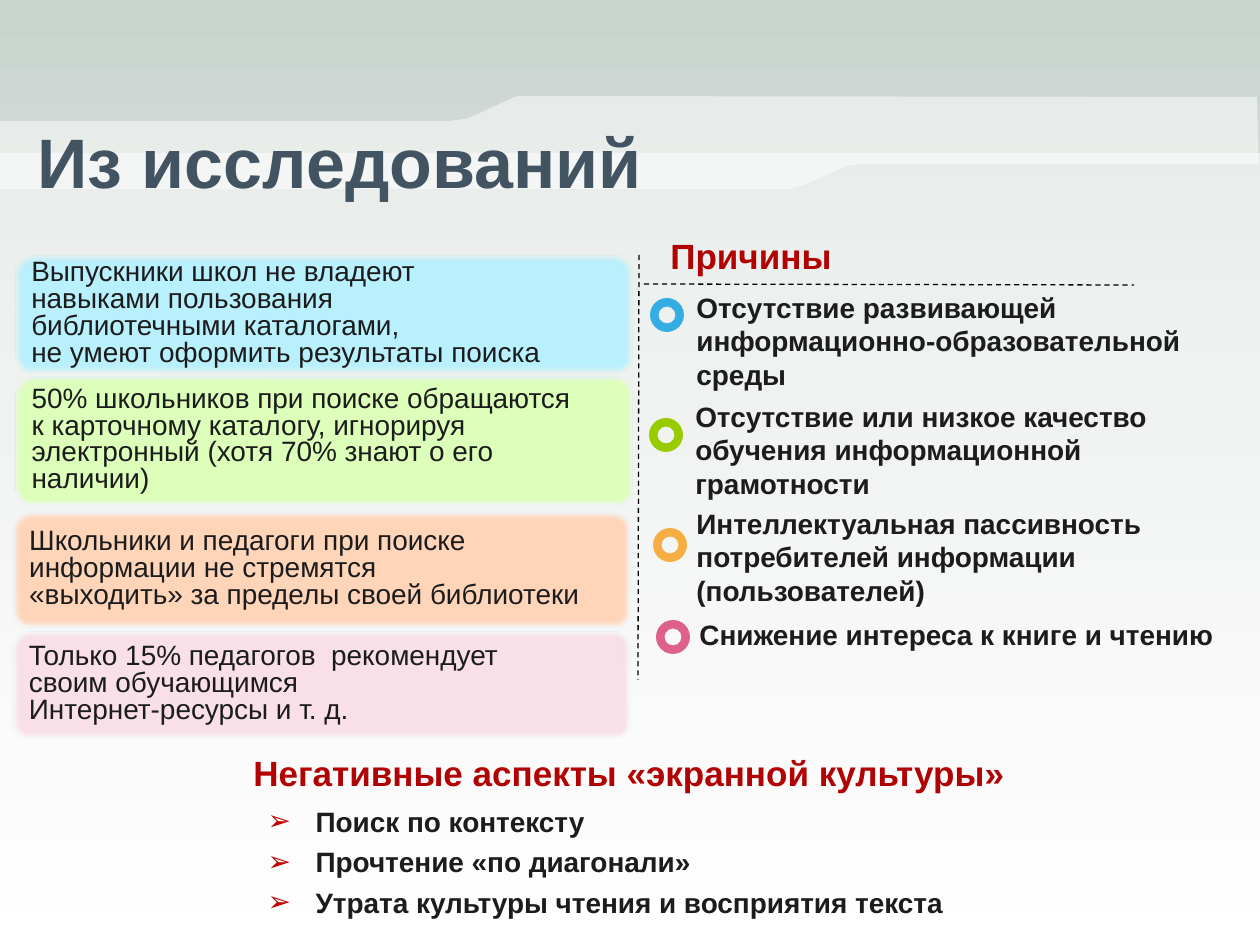
from typing import NamedTuple

from lxml.etree import SubElement as Sub
from pptx import Presentation
from pptx.dml.color import RGBColor as Rgb
from pptx.enum.dml import MSO_LINE as Dash
from pptx.enum.shapes import MSO_CONNECTOR as Link, MSO_SHAPE as Form
from pptx.enum.text import MSO_ANCHOR as Anchor, MSO_AUTO_SIZE as Auto, PP_ALIGN as Align
from pptx.oxml.ns import qn
from pptx.util import Pt

PX = 914400 / 126
FACE = "Arial"
INK = Rgb(0x1C, 0x1C, 0x1C)
SLATE = Rgb(0x42, 0x54, 0x62)
RED = Rgb(0xB1, 0x03, 0x03)
BLACK = Rgb(0x00, 0x00, 0x00)
WHITE = Rgb(0xFF, 0xFF, 0xFF)
MIST = Rgb(0xCA, 0xD4, 0xCF)
BLUE = Rgb(0x35, 0xAD, 0xE3)
GREEN = Rgb(0x99, 0xCC, 0x00)
AMBER = Rgb(0xF6, 0xAE, 0x44)
PINK = Rgb(0xDE, 0x60, 0x8D)
SKY = Rgb(0xB9, 0xF0, 0xFD)
LIME = Rgb(0xDC, 0xFF, 0xB9)
PEACH = Rgb(0xFF, 0xD5, 0xB9)
ROSE = Rgb(0xF8, 0xDF, 0xE8)


class Box(NamedTuple):
    x: int
    y: int
    w: int
    h: int


class Card(NamedTuple):
    box: Box
    fill: Rgb
    text: str


class Cause(NamedTuple):
    ring: tuple[int, int]
    color: Rgb
    box: Box
    text: str


BANDS = [
    [(0, 153), (1260, 153), (1260, 945), (0, 945)],
    [(0, 121), (449, 121), (465, 119), (476, 115), (514, 97), (519, 96), (1257, 97),
     (1259, 164), (872, 164), (849, 165), (804, 185), (789, 189), (0, 189)],
]
RULES = [((639, 255), (638, 680)), ((644, 284), (1134, 285))]
CARDS = [
    Card(Box(15, 255, 617, 118), SKY,
         "Выпускники школ не владеют\nнавыками пользования\n"
         "библиотечными каталогами,\nне умеют оформить результаты поиска"),
    Card(Box(15, 377, 617, 127), LIME,
         "50% школьников при поиске обращаются\nк карточному каталогу, игнорируя\n"
         "электронный (хотя 70% знают о его\nналичии)"),
    Card(Box(13, 512, 617, 115), PEACH,
         "Школьники и педагоги при поиске\nинформации не стремятся\n"
         "«выходить» за пределы своей библиотеки"),
    Card(Box(13, 631, 617, 107), ROSE,
         "Только 15% педагогов  рекомендует\nсвоим обучающимся\n"
         "Интернет-ресурсы и т. д."),
]
CAUSES = [
    Cause((650, 298), BLUE, Box(684, 284, 561, 115),
          "Отсутствие развивающей информационно-образовательной среды"),
    Cause((649, 418), GREEN, Box(683, 393, 556, 115),
          "Отсутствие или низкое качество обучения информационной грамотности"),
    Cause((653, 528), AMBER, Box(684, 500, 562, 115),
          "Интеллектуальная пассивность потребителей информации (пользователей)"),
    Cause((656, 620), PINK, Box(687, 611, 558, 47),
          "Снижение интереса к книге и чтению"),
]
RISKS = "Поиск по контексту\nПрочтение «по диагонали»\nУтрата культуры чтения и восприятия текста"


def px(n: int) -> int:
    return round(n * PX)


def place(shape, box: Box) -> None:
    shape.left, shape.top, shape.width, shape.height = map(px, box)


def mark(para) -> None:
    props = para._p.get_or_add_pPr()
    props.set("marL", str(px(48)))
    props.set("indent", str(px(-48)))
    Sub(Sub(props, qn("a:buClr")), qn("a:srgbClr"), val="C00000")
    Sub(props, qn("a:buFont"), typeface=FACE)
    Sub(props, qn("a:buChar"), char="➢")


def write(shape, text: str, size: int = 16, color: Rgb = INK, bold: bool = True,
          anchor=Anchor.TOP, wrap: bool = True, lead: float = 1.0,
          gap: int = 0, bullet: bool = False) -> None:
    frame = shape.text_frame
    frame.auto_size = Auto.NONE
    frame.word_wrap = wrap
    frame.vertical_anchor = anchor
    for i, line in enumerate(text.split("\n")):
        para = frame.add_paragraph() if i else frame.paragraphs[0]
        para.alignment = Align.LEFT
        para.line_spacing = lead
        para.space_before = Pt(gap if i else 0)
        if bullet:
            mark(para)
        run = para.add_run()
        run.text = line
        font = run.font
        font.name, font.size, font.bold = FACE, Pt(size), bold
        font.color.rgb = color


def label(slide, box: Box, text: str, **style) -> None:
    write(slide.shapes.add_textbox(*map(px, box)), text, **style)


def paint(shape, color: Rgb) -> None:
    shape.shadow.inherit = False
    shape.fill.solid()
    shape.fill.fore_color.rgb = color
    shape.line.fill.background()


def band(slide, dots: list[tuple[int, int]]) -> None:
    pen = slide.shapes.build_freeform(*dots[0], scale=PX)
    pen.add_line_segments(dots[1:], close=True)
    shape = pen.convert_to_shape()
    paint(shape, WHITE)
    tone = shape._element.spPr.find(qn("a:solidFill")).find(qn("a:srgbClr"))
    Sub(tone, qn("a:alpha"), val="50000")


def rule(slide, start: tuple[int, int], end: tuple[int, int]) -> None:
    line = slide.shapes.add_connector(Link.STRAIGHT, *map(px, start + end))
    line.line.color.rgb = BLACK
    line.line.width = Pt(0.75)
    line.line.dash_style = Dash.DASH
    Sub(line._element.spPr, qn("a:effectLst"))


def draw_card(slide, card: Card) -> None:
    shape = slide.shapes.add_shape(Form.ROUNDED_RECTANGLE, *map(px, card.box))
    shape.adjustments[0] = 0.115
    paint(shape, card.fill)
    shape.line.color.rgb = BLUE
    shape.line.width = Pt(0.5)
    soft = shape._element.spPr.find(qn("a:effectLst"))
    Sub(soft, qn("a:softEdge"), rad="31750")
    write(shape, card.text, bold=False, anchor=Anchor.MIDDLE, wrap=False, lead=0.8)


def draw_cause(slide, cause: Cause) -> None:
    ring = slide.shapes.add_shape(Form.DONUT, *map(px, cause.ring + (34, 34)))
    ring.adjustments[0] = 0.25
    paint(ring, cause.color)
    label(slide, cause.box, cause.text)


def main() -> None:
    deck = Presentation()
    deck.slide_width, deck.slide_height = px(1260), px(945)
    slide = deck.slides.add_slide(deck.slide_layouts[1])
    back = slide.background.fill
    back.gradient()
    back.gradient_angle = 270
    for stop, color, pos in zip(back.gradient_stops, (MIST, WHITE), (0, 1)):
        stop.color.rgb = color
        stop.position = pos

    for dots in BANDS:
        band(slide, dots)
    title, body = slide.placeholders
    for part in (title, body):
        slide.shapes._spTree.append(part._element)
    place(title, Box(25, 97, 1134, 127))
    write(title, "Из исследований", size=40, color=SLATE, anchor=Anchor.MIDDLE)
    place(body, Box(255, 798, 808, 129))
    write(body, RISKS, gap=4, bullet=True)

    label(slide, Box(658, 224, 484, 59), "Причины", size=20, color=RED, lead=1.1)
    label(slide, Box(241, 738, 897, 68), "Негативные аспекты «экранной культуры»",
          size=20, color=RED, anchor=Anchor.MIDDLE)
    for start, end in RULES:
        rule(slide, start, end)
    for cause in CAUSES:
        draw_cause(slide, cause)
    for card in CARDS:
        draw_card(slide, card)
    deck.save("out.pptx")


if __name__ == "__main__":
    main()
